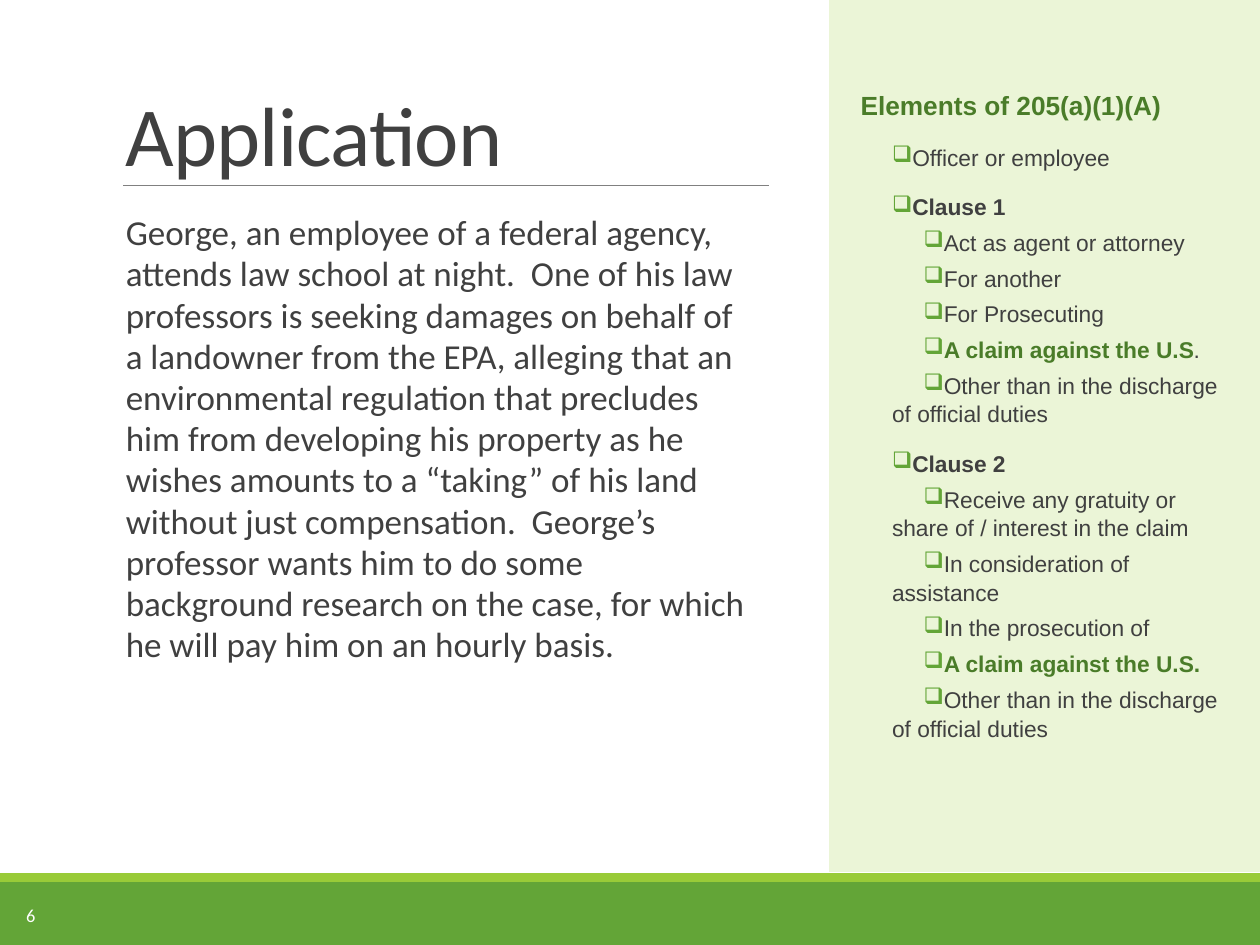
from lxml import etree
from pptx import Presentation
from pptx.dml.color import RGBColor
from pptx.enum.shapes import MSO_CONNECTOR, MSO_SHAPE
from pptx.enum.text import MSO_ANCHOR, PP_ALIGN
from pptx.oxml.ns import qn
from pptx.util import Inches, Pt

RECTANGLE = MSO_SHAPE.RECTANGLE
STRAIGHT = MSO_CONNECTOR.STRAIGHT
TOP, MIDDLE, BOTTOM = MSO_ANCHOR.TOP, MSO_ANCHOR.MIDDLE, MSO_ANCHOR.BOTTOM
LEFT = PP_ALIGN.LEFT

WHITE = RGBColor(0xFF, 0xFF, 0xFF)
GREEN = RGBColor(0x63, 0xA5, 0x37)
LIME = RGBColor(0x99, 0xCB, 0x38)
PALE_GREEN = RGBColor(0xEB, 0xF5, 0xD7)
DARK_GREEN = RGBColor(0x4A, 0x7C, 0x29)
TEXT_GRAY = RGBColor(0x40, 0x40, 0x40)
RULE_GRAY = RGBColor(0x80, 0x80, 0x80)

STORY = (
    "George, an employee of a federal agency, attends law school at night.  "
    "One of his law professors is seeking damages on behalf of a landowner from "
    "the EPA, alleging that an environmental regulation that precludes him from "
    "developing his property as he wishes amounts to a “taking” of his land "
    "without just compensation.  George’s professor wants him to do some "
    "background research on the case, for which he will pay him on an hourly basis."
)

PLAIN = {}
BOLD = {"bold": True}
KEY = {"bold": True, "color": DARK_GREEN}
DUTIES = [("Other than in the discharge of official duties", PLAIN)]

# Level, space after in points, runs
ELEMENTS = [
    (1, 12, [("Officer or employee", PLAIN)]),
    (1, 4, [("Clause 1", BOLD)]),
    (2, 4, [("Act as agent or attorney", PLAIN)]),
    (2, 4, [("For another", PLAIN)]),
    (2, 4, [("For Prosecuting", PLAIN)]),
    (2, 4, [("A claim against the U.S", KEY), (".", PLAIN)]),
    (2, 12, DUTIES),
    (1, 4, [("Clause 2", BOLD)]),
    (2, 4, [("Receive any gratuity or share of / interest in the claim", PLAIN)]),
    (2, 4, [("In consideration of assistance", PLAIN)]),
    (2, 4, [("In the prosecution of", PLAIN)]),
    (2, 4, [("A claim against the U.S.", KEY)]),
    (2, 6, DUTIES),
]


def add_text(paragraph, text, size=13, font="Arial", color=TEXT_GRAY, bold=False,
             tracking=None):
    """Append a run; tracking is in hundredths of a point."""
    run = paragraph.add_run()
    run.text = text
    run.font.size = Pt(size)
    run.font.name = font
    run.font.color.rgb = color
    run.font.bold = bold
    if tracking is not None:
        run.font._element.set("spc", str(tracking))


def prepare_frame(shape, anchor=TOP, insets=(0.1, 0.05, 0.1, 0.05)):
    """Set wrapping, anchor and insets, and return the first paragraph."""
    frame = shape.text_frame
    frame.word_wrap = True
    frame.vertical_anchor = anchor
    frame.margin_left, frame.margin_top, frame.margin_right, frame.margin_bottom = (
        Inches(inset) for inset in insets)
    frame.paragraphs[0].alignment = LEFT
    return frame.paragraphs[0]


def add_text_box(slide, box, text, anchor=TOP, insets=(0.1, 0.05, 0.1, 0.05),
                 line_spacing=1.0, **text_format):
    shape = slide.shapes.add_textbox(*map(Inches, box))
    paragraph = prepare_frame(shape, anchor, insets)
    paragraph.line_spacing = line_spacing
    add_text(paragraph, text, **text_format)


def add_panel(slide, box, color):
    shape = slide.shapes.add_shape(RECTANGLE, *map(Inches, box))
    shape.shadow.inherit = False
    shape.fill.solid()
    shape.fill.fore_color.rgb = color
    shape.line.fill.background()
    return shape


def add_checkbox(paragraph, level):
    """Indent the first line past the wrapped lines and give it a box bullet."""
    properties = paragraph._p.get_or_add_pPr()
    properties.set("marL", str(Inches(0.25 * (level - 1))))
    properties.set("indent", str(Inches(0.25)))
    bullet_color = etree.SubElement(properties, qn("a:buClr"))
    etree.SubElement(bullet_color, qn("a:srgbClr")).set("val", str(GREEN))
    etree.SubElement(properties, qn("a:buChar")).set("char", "❑")


def add_footer(slide, left, top, width, height):
    stripe = 0.07
    add_panel(slide, (left, top + stripe, width, height - stripe), GREEN)
    add_panel(slide, (left, top, width, stripe), LIME)
    add_text_box(slide, (left + 0.11, top + 0.13, 0.54, 0.4), "6", anchor=MIDDLE,
                 size=10.5, font="Calibri", color=WHITE)


def add_title(slide, left, top, width, height):
    add_text_box(slide, (left, top, width, height), "Application", anchor=BOTTOM,
                 insets=(0.1, 0.05, 0.1, 0.01), line_spacing=0.85,
                 size=48, font="Calibri", tracking=-50)
    bottom = Inches(top + height)
    rule = slide.shapes.add_connector(
        STRAIGHT, Inches(left + 0.08), bottom, Inches(6.1), bottom)
    rule.line.color.rgb = RULE_GRAY
    rule.line.width = Pt(0.5)
    etree.SubElement(rule._element.spPr, qn("a:effectLst"))


def add_elements_sidebar(slide, left, top, width, height):
    panel = add_panel(slide, (left, top, width, height), PALE_GREEN)
    heading = prepare_frame(panel, insets=(0.25, 0.7, 0.3, 0.05))
    heading.line_spacing = 1.05
    heading.space_after = Pt(12)
    add_text(heading, "Elements of 205(a)(1)(A)", size=15, color=DARK_GREEN, bold=True)
    for level, space_after, runs in ELEMENTS:
        paragraph = panel.text_frame.add_paragraph()
        paragraph.alignment = LEFT
        paragraph.level = level
        paragraph.line_spacing = 1.05
        paragraph.space_after = Pt(space_after)
        add_checkbox(paragraph, level)
        for text, text_format in runs:
            add_text(paragraph, text, **text_format)


def main():
    presentation = Presentation()
    presentation.slide_width = Inches(10)
    presentation.slide_height = Inches(7.5)
    slide = presentation.slides.add_slide(presentation.slide_layouts[6])
    add_footer(slide, 0, 6.93, 10, 0.57)
    add_text_box(slide, (0.9, 1.64, 5.2, 4.78), STORY, line_spacing=0.98,
                 size=20, font="Calibri")
    add_title(slide, 0.9, 0.31, 4.97, 1.16)
    add_elements_sidebar(slide, 6.58, 0, 3.42, 6.92)
    presentation.save("out.pptx")


if __name__ == "__main__":
    main()
